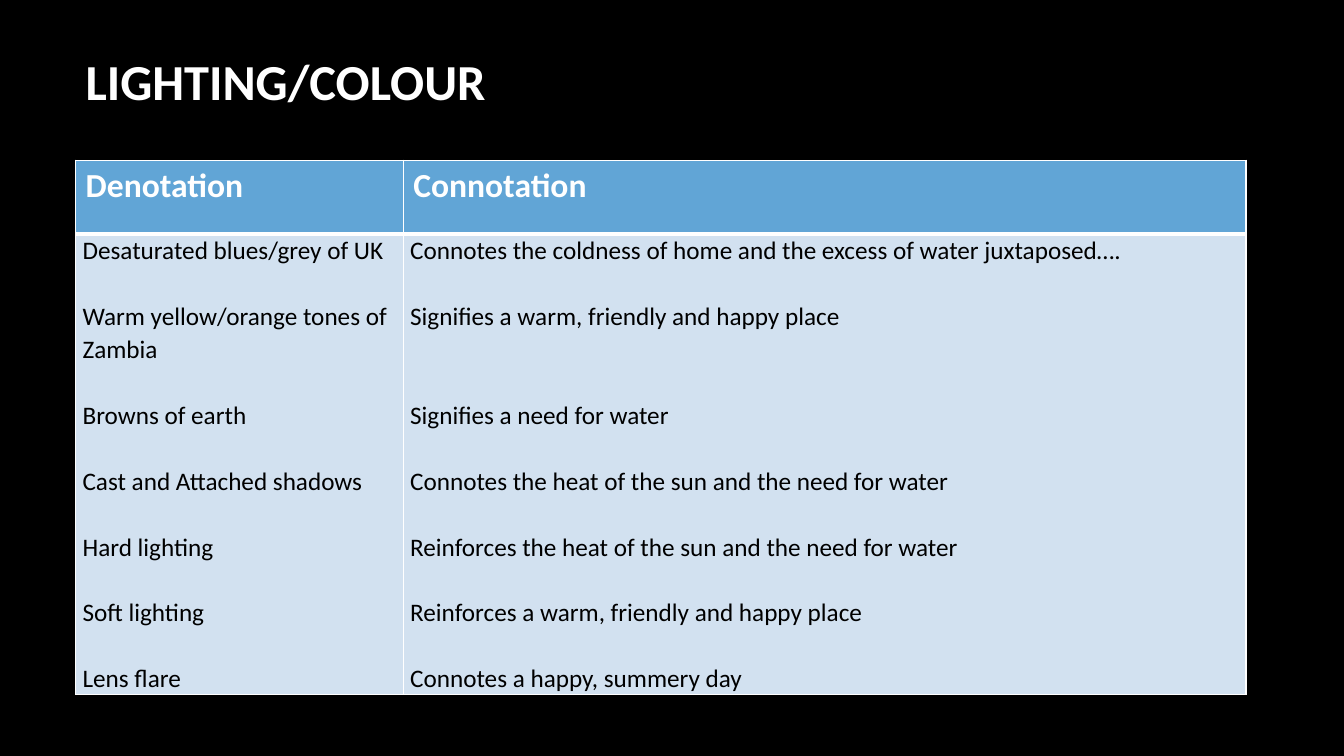
from lxml import etree
from pptx import Presentation, util as u
from pptx.dml.color import RGBColor
from pptx.enum import text
from pptx.oxml.ns import qn

LINE = 23.5
HEAD = dict(name="Calibri", size=u.Pt(24), bold=True)
TITLE = dict(HEAD, size=u.Pt(36))
BODY = dict(HEAD, size=u.Pt(18), bold=False)

PAIRS = [
    ("Desaturated blues/grey of UK",
     "Connotes the coldness of home and the excess of water juxtaposed…."),
    ("Warm yellow/orange tones of Zambia",
     "Signifies a warm, friendly and happy place"),
    ("Browns of earth", "Signifies a need for water"),
    ("Cast and Attached shadows",
     "Connotes the heat of the sun and the need for water"),
    ("Hard lighting",
     "Reinforces the heat of the sun and the need for water"),
    ("Soft lighting", "Reinforces a warm, friendly and happy place"),
    ("Lens flare", "Connotes a happy, summery day"),
]
GAPS = [
    [0, 1, 1, 1, 1, 1, 1],
    [0, 1, 2, 1, 1, 1, 1],
]


def paint(form, color):
    form.solid()
    form.fore_color.rgb = RGBColor.from_string(color)


def style(item, values):
    for key, value in values.items():
        setattr(item, key, value)


def write(para, words, font, color):
    para.text = words
    para.alignment = text.PP_ALIGN.LEFT
    run = para.runs[0]
    style(run.font, font)
    paint(run.font.fill, color)


def border(cell, color, widths):
    props = cell._tc.get_or_add_tcPr()
    for side, width in zip("LRTB", widths):
        line = etree.SubElement(props, qn("a:ln" + side), w=str(u.Pt(width)))
        fill = etree.SubElement(line, qn("a:solidFill"))
        etree.SubElement(fill, qn("a:srgbClr"), val=color)


def add_title(slide, words):
    title = slide.shapes.title
    style(title, dict(left=u.Pt(54), top=u.Pt(0),
                      width=u.Pt(798), height=u.Pt(114.5)))
    frame = title.text_frame
    style(frame, dict(vertical_anchor=text.MSO_ANCHOR.MIDDLE, word_wrap=True))
    write(frame.paragraphs[0], words, TITLE, "FFFFFF")


def fill_head(cell, words):
    border(cell, "FFFFFF", (1, 1, 1, 3))
    paint(cell.fill, "61A5D6")
    write(cell.text_frame.paragraphs[0], words, HEAD, "FFFFFF")


def fill_body(cell, items, gaps):
    border(cell, "FFFFFF", (1, 1, 3, 1))
    paint(cell.fill, "D2E1F0")
    style(cell, dict(margin_left=u.Pt(5), margin_right=u.Pt(5),
                     margin_top=0, margin_bottom=0))
    frame = cell.text_frame
    for row, (words, gap) in enumerate(zip(items, gaps)):
        para = frame.add_paragraph() if row else frame.paragraphs[0]
        style(para, dict(line_spacing=1.07, space_before=u.Pt(gap * LINE)))
        write(para, words, BODY, "000000")


def add_grid(slide, heads, lists):
    widths, heights = (234, 602), (52.5, 328)
    grid = slide.shapes.add_table(
        2, 2, u.Pt(54), u.Pt(114.5),
        u.Pt(sum(widths)), u.Pt(sum(heights))).table
    for row, height in zip(grid.rows, heights):
        row.height = u.Pt(height)
    for col, width in enumerate(widths):
        grid.columns[col].width = u.Pt(width)
        fill_head(grid.cell(0, col), heads[col])
        fill_body(grid.cell(1, col), lists[col], GAPS[col])


def main():
    deck = Presentation()
    style(deck, dict(slide_width=u.Pt(960), slide_height=u.Pt(540)))
    slide = deck.slides.add_slide(deck.slide_layouts[5])
    paint(slide.background.fill, "000000")
    add_title(slide, "LIGHTING/COLOUR")
    add_grid(slide, ("Denotation", "Connotation"), list(zip(*PAIRS)))
    deck.save("out.pptx")


if __name__ == "__main__":
    main()
